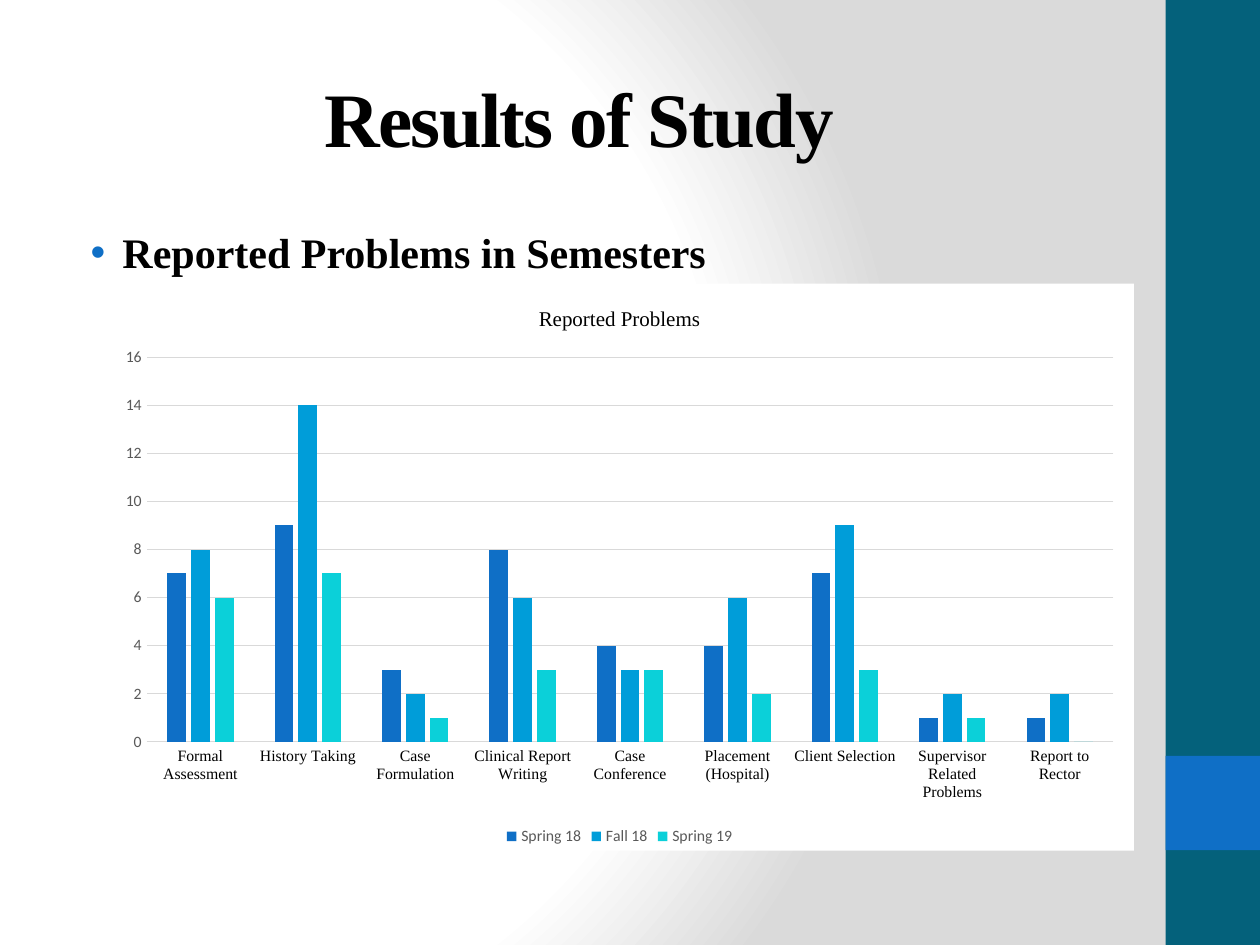
from pptx import Presentation
from pptx import util as u
from pptx.chart import data as chart_data
from pptx.dml.color import RGBColor
from pptx.enum import chart as charts, shapes, text
from pptx.oxml import parse_xml
from pptx.oxml.ns import nsdecls, qn

BLACK = RGBColor(0x00, 0x00, 0x00)
WHITE = RGBColor(0xFF, 0xFF, 0xFF)
SILVER = RGBColor(0xDA, 0xDA, 0xDA)
GRID = RGBColor(0xD9, 0xD9, 0xD9)
GREY = RGBColor(0x59, 0x59, 0x59)
TEAL = RGBColor(0x04, 0x61, 0x7B)
BLUE = RGBColor(0x0F, 0x6F, 0xC6)
SKY = RGBColor(0x00, 0x9D, 0xD9)
AQUA = RGBColor(0x0B, 0xD0, 0xD9)
SERIF = "Times New Roman"
SANS = "Calibri"

CATEGORIES = ["Formal Assessment", "History Taking", "Case Formulation",
              "Clinical Report Writing", "Case Conference",
              "Placement (Hospital)", "Client Selection",
              "Supervisor Related Problems", "Report to Rector"]
SERIES = [("Spring 18", BLUE, (7, 9, 3, 8, 4, 4, 7, 1, 1)),
          ("Fall 18", SKY, (8, 14, 2, 6, 3, 6, 9, 2, 2)),
          ("Spring 19", AQUA, (6, 7, 1, 3, 3, 2, 3, 1, 0))]


def box(left, top, width, height):
    return u.Cm(left), u.Cm(top), u.Cm(width), u.Cm(height)


def style(font, size, color, name=SERIF, bold=False):
    font.size, font.name, font.bold = u.Pt(size), name, bold
    font.color.rgb = color


class SlideBuilder:
    def __init__(self, presentation):
        self.slide = presentation.slides.add_slide(presentation.slide_layouts[5])

    def background(self, stops, focus):
        self.slide.background.fill.gradient()
        gradient = self.slide.element.find(".//" + qn("a:gradFill"))
        stop_xml = "".join(
            f'<a:gs pos="{position * 1000}"><a:srgbClr val="{color}"/></a:gs>'
            for position, color in stops)
        edges = " ".join(f'{side}="{value * 1000}"'
                         for side, value in zip("ltrb", focus))
        gradient.getparent().replace(gradient, parse_xml(
            f'<a:gradFill {nsdecls("a")} rotWithShape="1"><a:gsLst>{stop_xml}</a:gsLst>'
            f'<a:path path="circle"><a:fillToRect {edges}/></a:path></a:gradFill>'))

    def rectangle(self, place, color):
        shape = self.slide.shapes.add_shape(shapes.MSO_SHAPE.RECTANGLE, *place)
        shape.shadow.inherit = False
        shape.fill.solid()
        shape.fill.fore_color.rgb = color
        shape.line.fill.background()

    def title(self, place, words):
        shape = self.slide.shapes.title
        shape.left, shape.top, shape.width, shape.height = place
        shape.text_frame.vertical_anchor = text.MSO_ANCHOR.MIDDLE
        paragraph = shape.text_frame.paragraphs[0]
        paragraph.alignment = text.PP_ALIGN.CENTER
        run = paragraph.add_run()
        run.text = words
        style(run.font, 44, BLACK, bold=True)
        run.font._element.set("spc", "-100")

    def bullet(self, place, words):
        frame = self.slide.shapes.add_textbox(*place).text_frame
        frame.word_wrap = True
        paragraph = frame.paragraphs[0]
        paragraph.space_before = u.Pt(4.8)
        run = paragraph.add_run()
        run.text = words
        style(run.font, 24, BLACK, bold=True)
        properties = paragraph._p.get_or_add_pPr()
        properties.set("marL", str(u.Cm(0.95)))
        properties.set("indent", str(-u.Cm(0.64)))
        for xml in (f'<a:buClr {nsdecls("a")}><a:srgbClr val="{BLUE}"/></a:buClr>',
                    f'<a:buFont {nsdecls("a")} typeface="Arial"/>',
                    f'<a:buChar {nsdecls("a")} char="•"/>'):
            properties.append(parse_xml(xml))

    def column_chart(self, place, heading):
        data = chart_data.CategoryChartData()
        data.categories = CATEGORIES
        for name, _, values in SERIES:
            data.add_series(name, values)
        chart = self.slide.shapes.add_chart(
            charts.XL_CHART_TYPE.COLUMN_CLUSTERED, *place, data).chart
        style(chart.font, 10, BLACK, SANS)

        # White chart area
        area = parse_xml(
            f'<c:spPr {nsdecls("c", "a")}><a:solidFill><a:srgbClr val="{WHITE}"/>'
            '</a:solidFill><a:ln><a:noFill/></a:ln></c:spPr>')
        chart._chartSpace.find(qn("c:chart")).addnext(area)

        # Heading and legend
        run = chart.chart_title.text_frame.paragraphs[0].add_run()
        run.text = heading
        style(run.font, 12, BLACK)
        chart.chart_title.include_in_layout = False
        chart.has_legend = True
        chart.legend.position = charts.XL_LEGEND_POSITION.BOTTOM
        chart.legend.include_in_layout = False
        style(chart.legend.font, 9, GREY, SANS)

        # Axes
        category, value = chart.category_axis, chart.value_axis
        style(category.tick_labels.font, 9, BLACK)
        style(value.tick_labels.font, 9, GREY, SANS)
        for axis in (category, value):
            axis.major_tick_mark = charts.XL_TICK_MARK.NONE
            axis.minor_tick_mark = charts.XL_TICK_MARK.NONE
        for line in (category.format.line, value.major_gridlines.format.line):
            line.color.rgb = GRID
            line.width = u.Pt(0.75)
        value.format.line.fill.background()
        value.minimum_scale, value.maximum_scale, value.major_unit = 0, 16, 2

        # Columns
        plot = chart.plots[0]
        plot.gap_width, plot.overlap, plot.vary_by_categories = 219, -27, False
        for series, (_, color, _) in zip(plot.series, SERIES):
            series.format.fill.solid()
            series.format.fill.fore_color.rgb = color


def main():
    presentation = Presentation()
    presentation.slide_width, presentation.slide_height = u.Cm(25.4), u.Cm(19.05)
    builder = SlideBuilder(presentation)

    # Background and side band
    builder.background([(0, WHITE), (75, WHITE), (100, SILVER)], (20, 50, 100, 50))
    builder.rectangle(box(23.5, 0, 1.9, 19.05), TEAL)
    builder.rectangle(box(23.5, 15.24, 1.9, 1.9), BLUE)

    # Content
    builder.title(box(1.27, 0.76, 21.16, 3.18), "Results of Study ")
    builder.bullet(box(1.27, 4.45, 21.16, 13.33), "Reported Problems in Semesters")
    builder.column_chart(box(2.12, 5.72, 20.74, 11.43), "Reported Problems")

    presentation.save("out.pptx")


if __name__ == "__main__":
    main()
